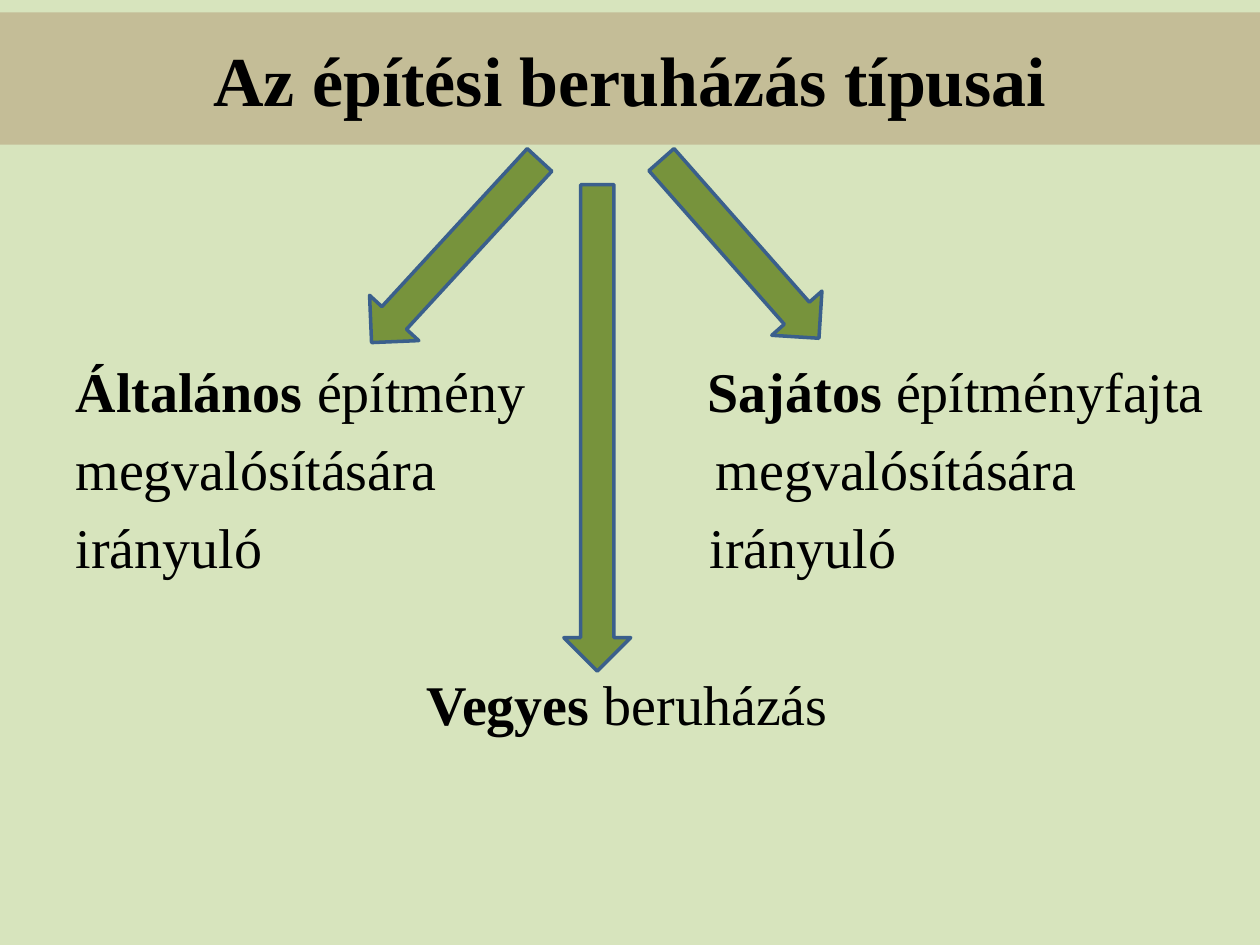
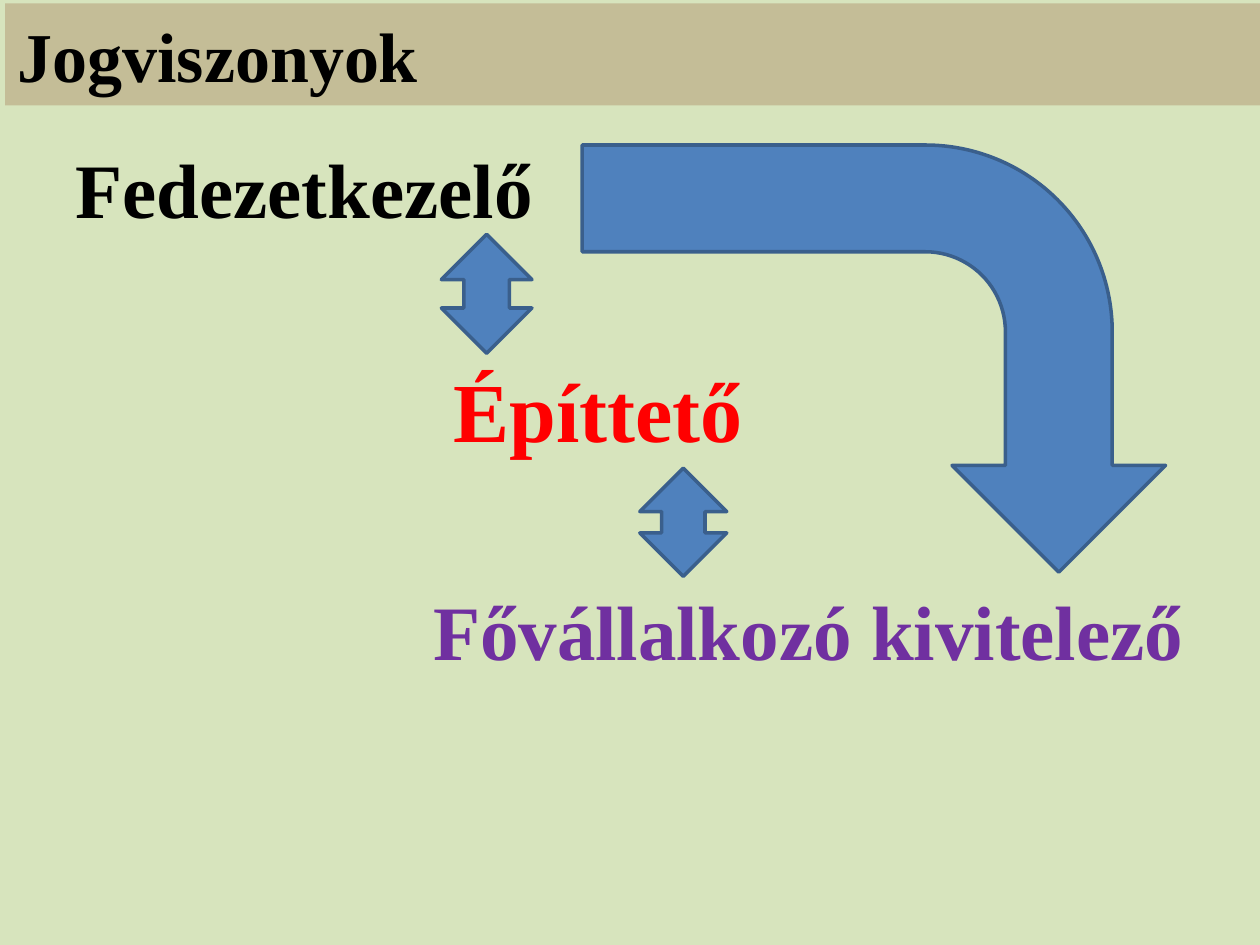
from dataclasses import dataclass
from lxml import etree
from pptx import Presentation
from pptx.dml.color import RGBColor
from pptx.enum.shapes import MSO_SHAPE
from pptx.enum.text import MSO_ANCHOR, MSO_AUTO_SIZE, PP_ALIGN
from pptx.oxml.ns import qn
from pptx.util import Pt

LEFT, CENTER, RIGHT = PP_ALIGN.LEFT, PP_ALIGN.CENTER, PP_ALIGN.RIGHT
DOWN, UPDOWN, BENT = MSO_SHAPE.DOWN_ARROW, MSO_SHAPE.UP_DOWN_ARROW, MSO_SHAPE.BENT_ARROW
MIDDLE, TOP = MSO_ANCHOR.MIDDLE, MSO_ANCHOR.TOP
FIXED = MSO_AUTO_SIZE.NONE

FONT = "Times New Roman"
COLORS = {
    "page": "D7E4BD", "band": "C4BD97", "ink": "000000", "red": "FF0000",
    "purple": "7030A0", "green": "77933C", "blue": "4F81BD", "edge": "3A5F8C",
}
LAYOUTS = {1: 1, 2: 3}
GAP = 6.4


@dataclass
class Box:
    left: float
    top: float
    width: float
    height: float


@dataclass
class Run:
    text: str
    bold: bool = False


@dataclass
class Line:
    runs: list[Run]
    size: float = 32
    color: str = "ink"
    align: PP_ALIGN = LEFT
    before: float = 0
    indent: float = 0


@dataclass
class Body:
    box: Box
    lines: list[Line]


@dataclass
class Arrow:
    kind: MSO_SHAPE
    box: Box
    color: str
    turn: float = 0


@dataclass
class Page:
    title: str
    align: PP_ALIGN
    band: Box
    bodies: list[Body]
    arrows: list[Arrow]


PAGES = [
    Page(
        "Az építési beruházás típusai", CENTER,
        Box(0, 7, 720, 75.6),
        [
            Body(Box(36, 199.9, 450, 338), [
                Line([Run("Általános", True), Run(" építmény")]),
                Line([Run("megvalósítására")], before=GAP),
                Line([Run("irányuló")], before=GAP),
                Line([Run("Vegyes ", True), Run("beruházás")], before=51.2, indent=200.6),
            ]),
            Body(Box(397.2, 199.9, 302.6, 145), [
                Line([Run("Sajátos ", True), Run("építményfajta")]),
                Line([Run("megvalósítására")], before=GAP, indent=4.6),
                Line([Run("irányuló")], before=GAP, indent=1.2),
            ]),
        ],
        [
            Arrow(DOWN, Box(241.2, 72.7, 38.2, 141.8), "green", 42.6),
            Arrow(DOWN, Box(403.9, 74.2, 38.2, 136.1), "green", 318.6),
            Arrow(DOWN, Box(322.2, 105.6, 38.2, 277.9), "green"),
        ],
    ),
    Page(
        "Jogviszonyok", LEFT,
        Box(2.9, 1.9, 717.1, 58.3),
        [
            Body(Box(36, 77.2, 648, 391), [
                Line([Run("Fedezetkezelő", True)], 44),
                Line([Run("Építtető", True)], 48, "red", before=71.1, indent=216),
                Line([Run("Fővállalkozó kivitelező", True)], 44, "purple", RIGHT, 70.9),
            ]),
        ],
        [
            Arrow(UPDOWN, Box(252.2, 133.9, 51.8, 68), "blue"),
            Arrow(UPDOWN, Box(365.6, 267.5, 49.7, 61.9), "blue"),
            Arrow(BENT, Box(377.3, 38.2, 244.1, 333.4), "blue", 90),
        ],
    ),
]


def tint(name: str) -> RGBColor:
    return RGBColor.from_string(COLORS[name])


def paint(fill, name: str) -> None:
    fill.solid()
    fill.fore_color.rgb = tint(name)


def place(shape, box: Box) -> None:
    shape.left, shape.top = Pt(box.left), Pt(box.top)
    shape.width, shape.height = Pt(box.width), Pt(box.height)


def write(para, line: Line) -> None:
    props = para._p.get_or_add_pPr()
    props.set("marL", str(Pt(line.indent)))
    props.set("indent", "0")
    etree.SubElement(props, qn("a:buNone"))
    para.alignment = line.align
    para.space_before = Pt(line.before)
    for part in line.runs:
        run = para.add_run()
        run.text = part.text
        run.font.name = FONT
        run.font.size = Pt(line.size)
        run.font.bold = part.bold
        run.font.color.rgb = tint(line.color)


def fill_text(shape, box: Box, lines: list[Line], anchor: MSO_ANCHOR) -> None:
    place(shape, box)
    frame = shape.text_frame
    frame.auto_size = FIXED
    frame.word_wrap = True
    frame.vertical_anchor = anchor
    for i, line in enumerate(lines):
        write(frame.add_paragraph() if i else frame.paragraphs[0], line)


def draw_arrow(slide, arrow: Arrow) -> None:
    box = arrow.box
    shape = slide.shapes.add_shape(
        arrow.kind, Pt(box.left), Pt(box.top), Pt(box.width), Pt(box.height))
    shape.rotation = arrow.turn
    shape.shadow.inherit = False
    paint(shape.fill, arrow.color)
    shape.line.color.rgb = tint("edge")
    shape.line.width = Pt(2)


def draw_page(deck, page: Page) -> None:
    layout = deck.slide_layouts[LAYOUTS[len(page.bodies)]]
    slide = deck.slides.add_slide(layout)
    title = slide.shapes.title
    paint(title.fill, "band")
    head = Line([Run(page.title, True)], 40, align=page.align)
    fill_text(title, page.band, [head], MIDDLE)
    for i, body in enumerate(page.bodies, 1):
        fill_text(slide.placeholders[i], body.box, body.lines, TOP)
    for arrow in page.arrows:
        draw_arrow(slide, arrow)


def main() -> None:
    deck = Presentation()
    deck.slide_width, deck.slide_height = Pt(720), Pt(540)
    paint(deck.slide_master.background.fill, "page")
    for page in PAGES:
        draw_page(deck, page)
    deck.save("out.pptx")


if __name__ == "__main__":
    main()
